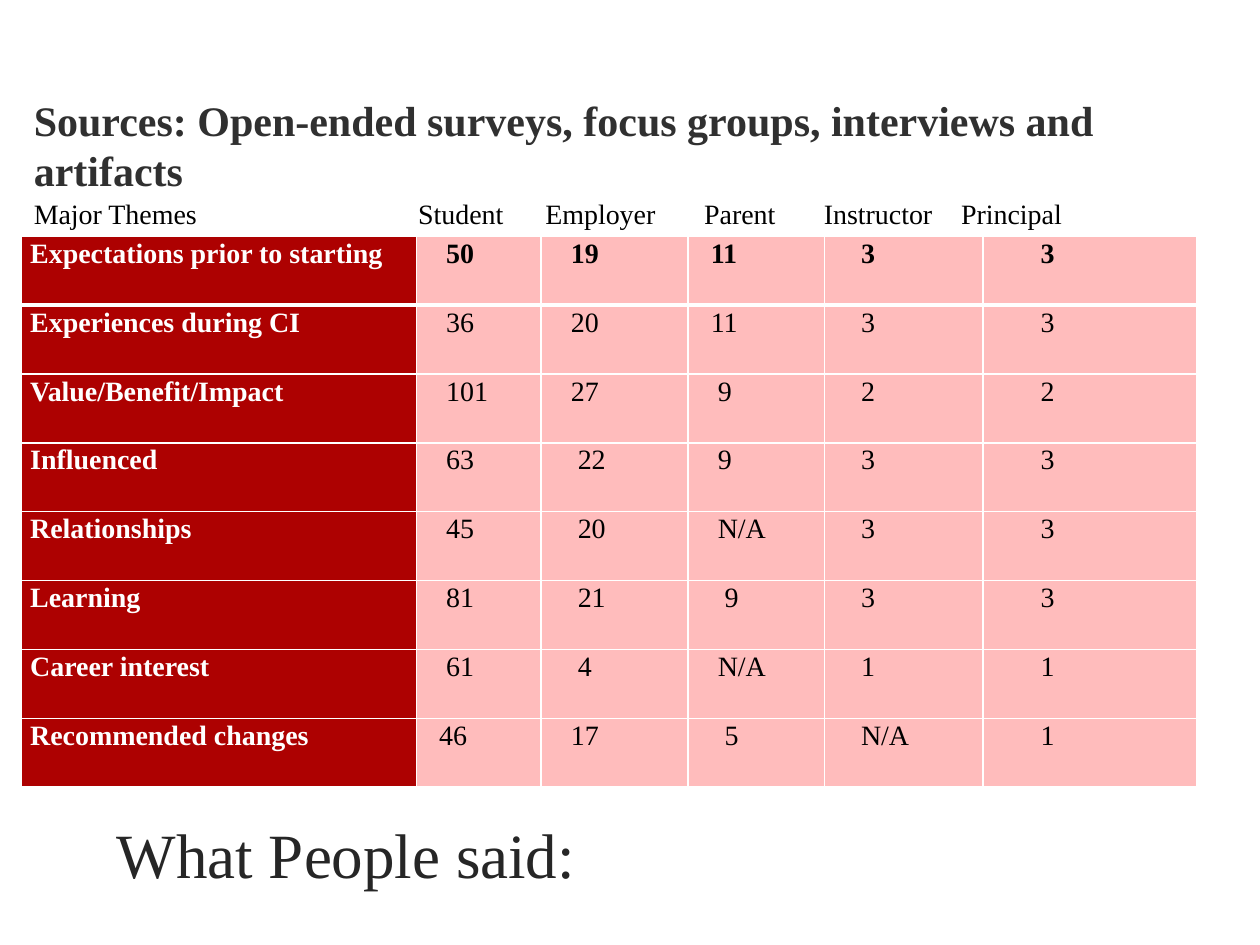
import pptx
import pptx.dml.color
import pptx.enum.text
import pptx.oxml.ns
import pptx.util
from lxml import etree

W, H = pptx.util.Inches(10), pptx.util.Inches(7.5)
FONT = "Times New Roman"
COLORS = {"title": "262626", "heading": "303030", "text": "000000",
          "white": "FFFFFF", "theme": "AD0101", "count": "FFBCBC"}
SPACE = pptx.util.Pt(4)
PAD = pptx.util.Inches(0.07)
COLUMN_SHARES = [0.336, 0.106, 0.125, 0.116, 0.135, 0.182]
HEADER_TABS = [0.305, 0.406, 0.532, 0.627, 0.736]
HEADERS = ["Major Themes", "Student", "Employer", "Parent", "Instructor", "Principal"]
ROWS = [
    ("Expectations prior to starting", ["50", "19", "11", "3", "3"], [3, 3, 2, 4, 7]),
    ("Experiences during CI", ["36", "20", "11", "3", "3"], [3, 3, 2, 4, 7]),
    ("Value/Benefit/Impact", ["101", "27", "9", "2", "2"], [3, 3, 3, 4, 7]),
    ("Influenced", ["63", "22", "9", "3", "3"], [3, 4, 3, 4, 7]),
    ("Relationships", ["45", "20", "N/A", "3", "3"], [3, 4, 3, 4, 7]),
    ("Learning", ["81", "21", "9", "3", "3"], [3, 4, 4, 4, 7]),
    ("Career interest", ["61", "4", "N/A", "1", "1"], [3, 4, 3, 4, 7]),
    ("Recommended changes", ["46", "17", "5", "N/A", "1"], [2, 3, 4, 4, 7]),
]


def share(left, top, width, height):
    """Turn shares of the slide into a box of lengths."""
    return int(left * W), int(top * H), int(width * W), int(height * H)


def set_attrs(obj, values):
    """Set each named attribute on an object."""
    for name, value in values.items():
        setattr(obj, name, value)


def write(p, text, size, color, bold=False):
    """Add one formatted run to a paragraph."""
    r = p.add_run()
    r.text = text
    set_attrs(r.font, {"name": FONT, "size": pptx.util.Pt(size), "bold": bold})
    r.font.color.rgb = pptx.dml.color.RGBColor.from_string(COLORS[color])


def add_text(slide, box, text, size, color, anchor, bold=False, **frame):
    """Place a wrapped text box and return its paragraph."""
    tf = slide.shapes.add_textbox(*box).text_frame
    set_attrs(tf, {"word_wrap": True, "vertical_anchor": anchor, **frame})
    write(tf.paragraphs[0], text, size, color, bold)
    return tf.paragraphs[0]


def add_header(slide, box):
    """Place the column names on tab stops."""
    p = add_text(slide, box, "\t".join(HEADERS), 16, "text",
                 pptx.enum.text.MSO_ANCHOR.MIDDLE)
    tabs = etree.SubElement(p._p.get_or_add_pPr(), pptx.oxml.ns.qn("a:tabLst"))
    for stop in HEADER_TABS:
        etree.SubElement(tabs, pptx.oxml.ns.qn("a:tab"), pos=str(int(stop * W)), algn="l")


def add_borders(cell, widths):
    """Draw white borders of the given point widths on a cell."""
    tcPr = cell._tc.get_or_add_tcPr()
    for side, width in widths.items():
        ln = etree.SubElement(tcPr, pptx.oxml.ns.qn(f"a:ln{side}"),
                              w=str(pptx.util.Pt(width)))
        fill = etree.SubElement(ln, pptx.oxml.ns.qn("a:solidFill"))
        etree.SubElement(fill, pptx.oxml.ns.qn("a:srgbClr"), val=COLORS["white"])


def fill_cell(cell, text, spaces, row, is_theme):
    """Format one table cell and write its text."""
    add_borders(cell, {"L": 1, "R": 1, "T": 3 if row == 1 else 1, "B": 3 if row == 0 else 1})
    cell.fill.solid()
    cell.fill.fore_color.rgb = pptx.dml.color.RGBColor.from_string(
        COLORS["theme" if is_theme else "count"])
    set_attrs(cell, {"margin_left": PAD + spaces * SPACE, "margin_right": PAD,
                     "margin_top": 0, "margin_bottom": 0})
    p = cell.text_frame.paragraphs[0]
    p.line_spacing = 1.07
    write(p, text, 16, "white" if is_theme else "text", is_theme or row == 0)


def add_theme_table(slide, box):
    """Place the table of themes and counts in the box."""
    table = slide.shapes.add_table(len(ROWS), len(HEADERS), *box).table
    for column, part in zip(table.columns, COLUMN_SHARES):
        column.width = int(part * box[2])
    for i, (theme, counts, indents) in enumerate(ROWS):
        table.rows[i].height = box[3] // len(ROWS)
        for j, (text, spaces) in enumerate(zip([theme, *counts], [0, *indents])):
            fill_cell(table.cell(i, j), text, spaces, i, j == 0)


def main():
    """Build and save the slide."""
    prs = pptx.Presentation()
    set_attrs(prs, {"slide_width": W, "slide_height": H})
    slide = prs.slides.add_slide(prs.slide_layouts[6])
    anchors = pptx.enum.text.MSO_ANCHOR
    add_text(slide, share(0.083, 0.85, 0.742, 0.1), "What People said:", 36, "title",
             anchors.BOTTOM)
    add_text(slide, share(0.017, 0.1, 0.95, 0.7),
             "Sources: Open-ended surveys, focus groups, interviews and artifacts",
             24, "heading", anchors.TOP, True, margin_top=0)
    add_theme_table(slide, share(0.017, 0.25, 0.933, 0.583))
    add_header(slide, share(0.017, 0.201, 1.167, 0.049))
    prs.save("out.pptx")


if __name__ == "__main__":
    main()
